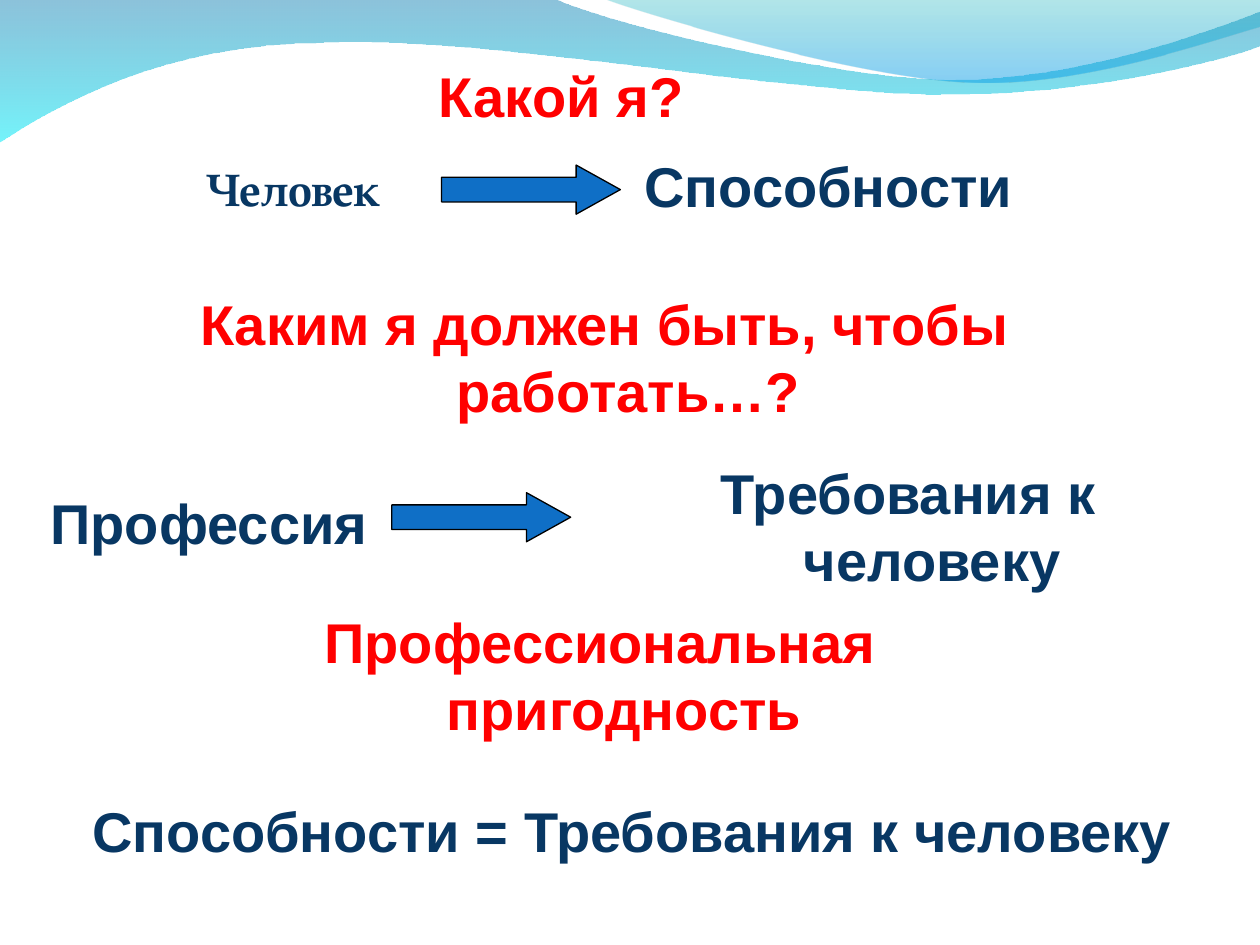
from dataclasses import dataclass

from lxml import etree
from pptx import Presentation
from pptx.dml.color import RGBColor
from pptx.enum.shapes import MSO_SHAPE
from pptx.enum.text import MSO_ANCHOR, MSO_AUTO_SIZE, PP_ALIGN
from pptx.oxml.ns import qn
from pptx.shapes.base import BaseShape
from pptx.slide import Slide
from pptx.util import Pt

RIGHT_ARROW = MSO_SHAPE.RIGHT_ARROW
TOP = MSO_ANCHOR.TOP
NO_AUTOFIT = MSO_AUTO_SIZE.NONE
CENTER = PP_ALIGN.CENTER

NAVY = RGBColor(0x08, 0x37, 0x63)
RED = RGBColor(0xFF, 0x00, 0x00)
BLUE = RGBColor(0x0F, 0x6F, 0xC6)
BLACK = RGBColor(0x00, 0x00, 0x00)
DEEP_BLUE = RGBColor(0x00, 0x79, 0xAF)
CYAN = RGBColor(0x00, 0xEB, 0xF8)
TEAL = RGBColor(0x00, 0xAD, 0xB6)
SKY = RGBColor(0x00, 0x9B, 0xE5)

ARROW_WIDTH, ARROW_HEIGHT = 102.2, 28.1

Point = tuple[float, float]


@dataclass(frozen=True)
class Label:
    text: str
    left: float
    top: float
    width: float
    height: float = 53.3
    color: RGBColor = NAVY
    font: str = "Arial"
    size: float = 32
    indent: float = 27


@dataclass(frozen=True)
class GradientStop:
    position: int
    color: RGBColor
    opacity: int


@dataclass(frozen=True)
class Wave:
    start: Point
    segments: tuple[tuple[Point, ...], ...]
    stops: tuple[GradientStop, ...]


TITLE = Label("Какой я?", 223.9, 31.7, 193.7, color=RED)

LABELS = (
    Label("Человек", 70.6, 88.6, 193.7, font="TeX Gyre Pagella", size=26, indent=21.6),
    Label("Способности", 360, 82.8, 226.8),
    Label("Требования к человеку", 331.9, 258.5, 374.4, 64.8),
    Label("Профессия", 19.8, 275.8, 199.4),
    Label("Каким я должен быть, чтобы работать…?", 82.1, 162, 527, color=RED),
    Label("Способности = Требования к человеку", 22.6, 451.4, 677.5),
    Label("Профессиональная пригодность", 99.4, 343.4, 487.4, 73.4, color=RED),
)

ARROWS: tuple[Point, ...] = ((252.3, 94.3), (223.9, 281.5))

WAVES = (
    Wave(
        (0, -0.7),
        (
            ((316.8, -0.7),),
            ((342.7, 12.2), (478.1, 45.4), (545.8, 45.4)),
            ((614.2, 45.4), (689.8, 18.7), (720, 6.5)),
            ((720.7, 25.9),),
            ((707.8, 31.7), (626.4, 54.7), (537.1, 54)),
            ((447.8, 54), (275, 20.2), (185, 24.5)),
            ((92.9, 25.2), (33.1, 59.8), (-0.7, 81.4)),
        ),
        (GradientStop(0, DEEP_BLUE, 45), GradientStop(100, CYAN, 55)),
    ),
    Wave(
        (344.9, -0.7),
        (
            ((366.5, 7.9), (491, 44.6), (553.7, 46.8)),
            ((616.3, 49.7), (691.9, 23), (720, 15.1)),
            ((720, 0),),
        ),
        (GradientStop(0, TEAL, 30), GradientStop(80, SKY, 45), GradientStop(100, SKY, 49)),
    ),
)


def set_gradient(shape: BaseShape, stops: tuple[GradientStop, ...]) -> None:
    shape.fill.gradient()
    shape.fill.gradient_angle = 270
    stop_list = shape.element.spPr.find(qn("a:gradFill")).find(qn("a:gsLst"))
    for old_stop in list(stop_list):
        stop_list.remove(old_stop)
    for stop in stops:
        element = etree.SubElement(stop_list, qn("a:gs"), pos=str(stop.position * 1000))
        color = etree.SubElement(element, qn("a:srgbClr"), val=str(stop.color))
        etree.SubElement(color, qn("a:alpha"), val=str(stop.opacity * 1000))


def bend_segments(shape: BaseShape, segments: tuple[tuple[Point, ...], ...]) -> None:
    lines = iter(list(shape.element.spPr.iter(qn("a:lnTo"))))
    for segment in segments:
        first, *others = [next(lines) for _ in segment]
        if others:
            first.tag = qn("a:cubicBezTo")
            for line in others:
                first.append(line[0])
                line.getparent().remove(line)


def add_wave(slide: Slide, wave: Wave) -> None:
    points = [point for segment in wave.segments for point in segment]
    start_x, start_y = wave.start
    builder = slide.shapes.build_freeform(Pt(start_x), Pt(start_y), scale=1.0)
    builder.add_line_segments([(Pt(x), Pt(y)) for x, y in points], close=True)
    shape = builder.convert_to_shape()
    bend_segments(shape, wave.segments)
    shape.shadow.inherit = False
    shape.line.fill.background()
    set_gradient(shape, wave.stops)


def write_text(shape: BaseShape, text: str, *, font: str, size: float,
               color: RGBColor, indent: float) -> None:
    frame = shape.text_frame
    frame.word_wrap = True
    frame.auto_size = NO_AUTOFIT
    frame.vertical_anchor = TOP
    frame.margin_left = frame.margin_right = Pt(7.2)
    frame.margin_top = frame.margin_bottom = Pt(3.6)
    paragraph = frame.paragraphs[0]
    properties = paragraph._p.get_or_add_pPr()
    properties.set("marL", str(Pt(indent)))
    properties.set("indent", str(Pt(-indent)))
    paragraph.alignment = CENTER
    paragraph.space_before = Pt(0)
    run = paragraph.add_run()
    run.text = text
    run.font.name = font
    run.font.size = Pt(size)
    run.font.bold = True
    run.font.color.rgb = color


def place_label(shape: BaseShape, label: Label) -> None:
    shape.left, shape.top = Pt(label.left), Pt(label.top)
    shape.width, shape.height = Pt(label.width), Pt(label.height)
    write_text(shape, label.text, font=label.font, size=label.size,
               color=label.color, indent=label.indent)


def add_arrow(slide: Slide, left: float, top: float) -> None:
    arrow = slide.shapes.add_shape(
        RIGHT_ARROW, Pt(left), Pt(top), Pt(ARROW_WIDTH), Pt(ARROW_HEIGHT))
    arrow.adjustments[0] = 0.5
    arrow.adjustments[1] = 0.9
    arrow.shadow.inherit = False
    arrow.fill.solid()
    arrow.fill.fore_color.rgb = BLUE
    arrow.line.color.rgb = BLACK
    arrow.line.width = Pt(0.75)


def main() -> None:
    presentation = Presentation()
    presentation.slide_width, presentation.slide_height = Pt(720), Pt(540)
    slide = presentation.slides.add_slide(presentation.slide_layouts[5])
    for wave in WAVES:
        add_wave(slide, wave)
    place_label(slide.shapes.title, TITLE)
    for label in LABELS:
        place_label(slide.shapes.add_textbox(0, 0, 0, 0), label)
    for left, top in ARROWS:
        add_arrow(slide, left, top)
    presentation.save("out.pptx")


if __name__ == "__main__":
    main()
